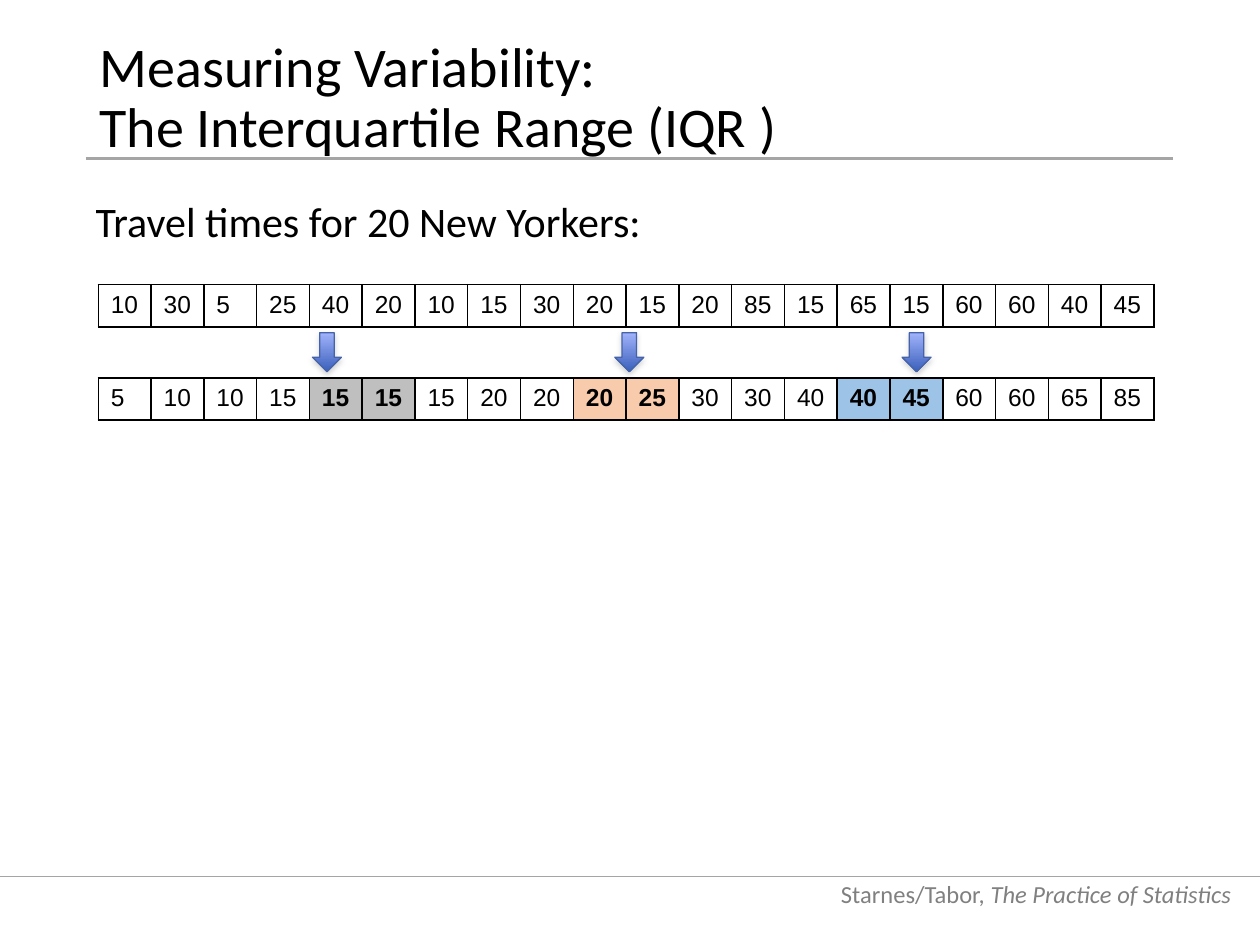
from lxml.etree import SubElement
from pptx import Presentation
from pptx.dml.color import RGBColor
from pptx.enum.shapes import MSO_CONNECTOR, MSO_SHAPE
from pptx.enum.text import MSO_ANCHOR, MSO_AUTO_SIZE, PP_ALIGN
from pptx.oxml.ns import qn
from pptx.util import Inches, Pt

COLORS = {
    "text": "000000", "muted": "808080", "rule": "A5A5A5", "white": "FFFFFF",
    "lower": "BFBFBF", "median": "F8CBAD", "upper": "9DC3E6",
    "arrow_top": "A1B3FB", "arrow_bottom": "3B60BB", "arrow_edge": "4663AA",
}
TRAVEL_TIMES = [10, 30, 5, 25, 40, 20, 10, 15, 30, 20,
                15, 20, 85, 15, 65, 15, 60, 60, 40, 45]
QUARTILE_PAIRS = {4: "lower", 5: "lower", 9: "median", 10: "median",
                  14: "upper", 15: "upper"}
GRID_LEFT, GRID_WIDTH, ROW_HEIGHT = 0.78, 8.38, 0.33
ARROW_LEFTS = (4.88, 7.16, 2.48)


def rgb(name):
    return RGBColor.from_string(COLORS[name])


def add_run(paragraph, text, size, color="text", font="Calibri", bold=None, italic=None):
    run = paragraph.add_run()
    run.text = text
    run.font.name, run.font.size = font, Pt(size)
    run.font.bold, run.font.italic = bold, italic
    run.font.color.rgb = rgb(color)


def add_rule(slide, left, right, top, weight):
    rule = slide.shapes.add_connector(
        MSO_CONNECTOR.STRAIGHT, Inches(left), Inches(top), Inches(right), Inches(top))
    rule.line.color.rgb = rgb("rule")
    rule.line.width = Pt(weight)
    SubElement(rule._element.spPr, qn("a:effectLst"))


def set_title(slide, first_line, second_line):
    title = slide.shapes.title
    title.left, title.top, title.width, title.height = map(Inches, (0.69, 0.4, 8.62, 0.78))
    frame = title.text_frame
    frame.vertical_anchor = MSO_ANCHOR.MIDDLE
    frame.auto_size = MSO_AUTO_SIZE.NONE
    heading = frame.paragraphs[0]
    heading.alignment = PP_ALIGN.LEFT
    heading.line_spacing = 0.9
    add_run(heading, first_line, 32)
    heading.add_line_break()
    add_run(heading, second_line, 32)


def add_text_frame(slide, left, top, width, height):
    frame = slide.shapes.add_textbox(*map(Inches, (left, top, width, height))).text_frame
    frame.word_wrap = True
    return frame


def add_cell_borders(cell):
    """Draw all four edges; call before the cell is filled."""
    properties = cell._tc.get_or_add_tcPr()
    for side in ("a:lnL", "a:lnR", "a:lnT", "a:lnB"):
        edge = SubElement(properties, qn(side), w=str(Pt(1)))
        fill = SubElement(edge, qn("a:solidFill"))
        SubElement(fill, qn("a:srgbClr"), val=COLORS["text"])


def add_times_row(slide, times, top, base_fill=None, highlights=None):
    highlights = highlights or {}
    table = slide.shapes.add_table(
        1, len(times), *map(Inches, (GRID_LEFT, top, GRID_WIDTH, ROW_HEIGHT))).table
    table.first_row = table.horz_banding = False
    for index, minutes in enumerate(times):
        table.columns[index].width = Inches(GRID_WIDTH / len(times))
        cell = table.cell(0, index)
        add_cell_borders(cell)
        fill_name = highlights.get(index, base_fill)
        if fill_name:
            cell.fill.solid()
            cell.fill.fore_color.rgb = rgb(fill_name)
        else:
            cell.fill.background()
        add_run(cell.text_frame.paragraphs[0], str(minutes), 14,
                font="Arial", bold=index in highlights)


def add_arrow(group, left):
    arrow = group.shapes.add_shape(
        MSO_SHAPE.DOWN_ARROW, *map(Inches, (left, 2.64, 0.23, 0.31)))
    arrow.fill.gradient()
    arrow.fill.gradient_angle = 270
    for stop, name in zip(arrow.fill.gradient_stops, ("arrow_top", "arrow_bottom")):
        stop.color.rgb = rgb(name)
    arrow.line.color.rgb = rgb("arrow_edge")
    arrow.line.width = Pt(0.75)
    effects = SubElement(arrow._element.spPr, qn("a:effectLst"))
    shadow = SubElement(effects, qn("a:outerShdw"), blurRad=str(Pt(3.1)),
                        dist=str(Pt(1.8)), dir="5400000", rotWithShape="0")
    tint = SubElement(shadow, qn("a:srgbClr"), val=COLORS["muted"])
    SubElement(tint, qn("a:alpha"), val="35000")


def main():
    deck = Presentation()
    deck.slide_width, deck.slide_height = Inches(10), Inches(7.5)
    slide = deck.slides.add_slide(deck.slide_layouts[5])

    credit_frame = add_text_frame(slide, 6.47, 6.86, 3.4, 0.4)
    credit_frame.vertical_anchor = MSO_ANCHOR.BOTTOM
    credit = credit_frame.paragraphs[0]
    credit.alignment = PP_ALIGN.RIGHT
    add_run(credit, "Starnes/Tabor,", 14, "muted")
    add_run(credit, " The Practice of Statistics", 14, "muted", italic=True)
    add_rule(slide, 0, 10, 6.96, 0.5)
    add_rule(slide, 0.68, 9.31, 1.26, 1.5)

    set_title(slide, "Measuring Variability: ", "The Interquartile Range (IQR )")
    add_times_row(slide, sorted(TRAVEL_TIMES), 3, highlights=QUARTILE_PAIRS)
    add_times_row(slide, TRAVEL_TIMES, 2.26, base_fill="white")

    arrows = slide.shapes.add_group_shape()
    for left in ARROW_LEFTS:
        add_arrow(arrows, left)

    caption_frame = add_text_frame(slide, 0.66, 1.5, 8.42, 0.5)
    caption_frame.auto_size = MSO_AUTO_SIZE.SHAPE_TO_FIT_TEXT
    caption = caption_frame.paragraphs[0]
    caption.space_after = Pt(6)
    add_run(caption, "Travel times for 20 New Yorkers:", 24)

    deck.save("out.pptx")


if __name__ == "__main__":
    main()
